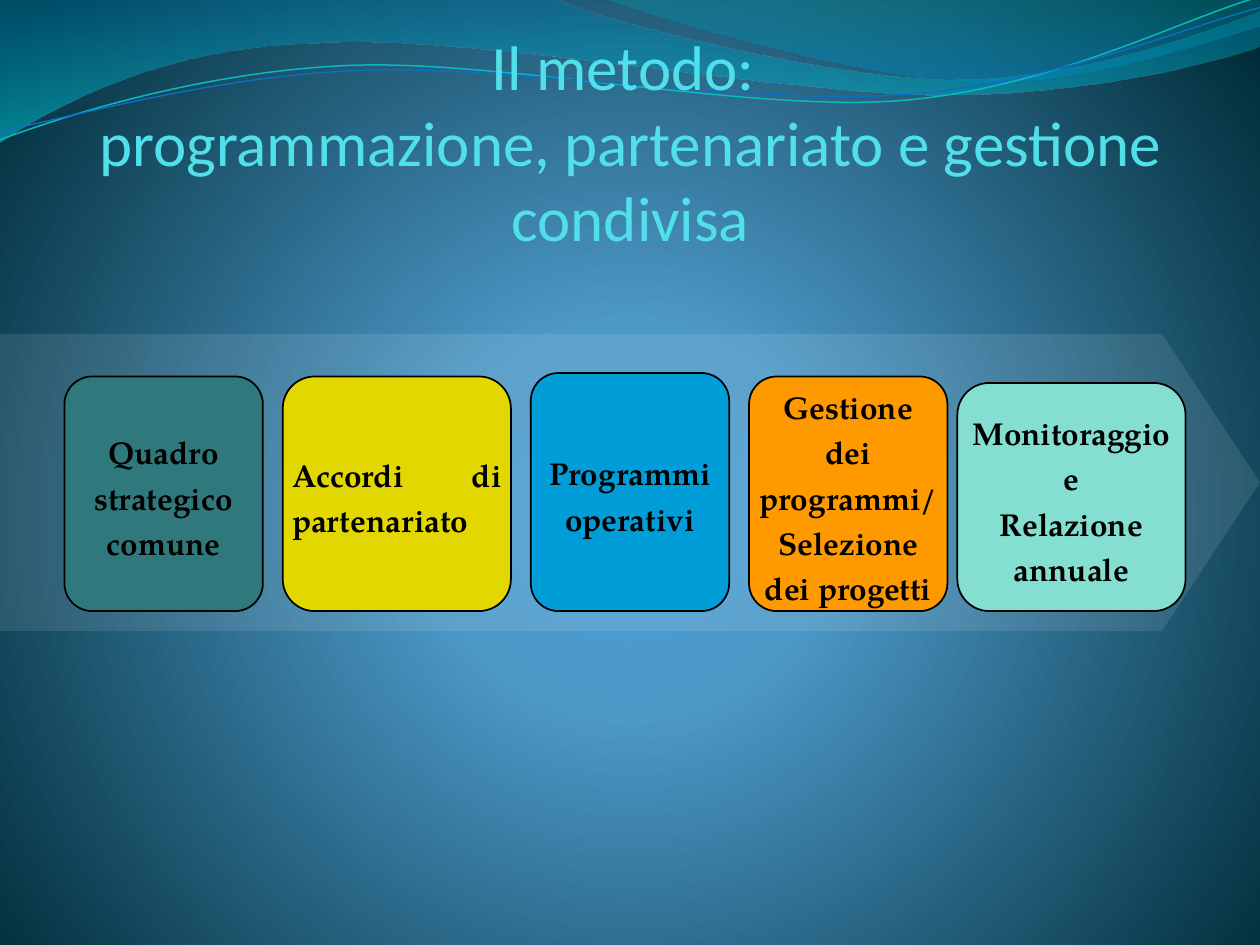
import lxml.etree
import pptx
import pptx.dml.color
import pptx.enum.shapes
import pptx.enum.text
import pptx.oxml.ns
import pptx.util

Cm = pptx.util.Cm
Pt = pptx.util.Pt
RGB = pptx.dml.color.RGBColor.from_string
qn = pptx.oxml.ns.qn
Sub = lxml.etree.SubElement
ALIGN = pptx.enum.text.PP_ALIGN
SHAPE = pptx.enum.shapes.MSO_SHAPE

COLORS = {
    "title": "51E0EA", "text": "000000", "arrow": "FFFFFF",
    "framework": "2F797D", "agreements": "E2D700", "programmes": "009DD9",
    "management": "FF9900", "monitoring": "85DFD0",
    "glow": "4AA0D6", "sky": "4C98C7", "night": "002C38",
    "wave blue": "0074A1", "wave cyan": "00C6CF",
    "wave teal": "00A1A9", "wave azure": "008BBF",
    "teal line": "0AB8BF", "blue line": "0F6FC6",
}


def set_gradient(fill, owner, stops):
    """Give fill the (position %, colour name, opacity %) stops; return its XML without a direction."""
    fill.gradient()
    gradient = owner.find(".//" + qn("a:gradFill"))
    for child in list(gradient):
        gradient.remove(child)
    stop_list = Sub(gradient, qn("a:gsLst"))
    for position, name, opacity in stops:
        stop = Sub(stop_list, qn("a:gs"), pos=str(position * 1000))
        color = Sub(stop, qn("a:srgbClr"), val=COLORS[name])
        if opacity < 100:
            Sub(color, qn("a:alpha"), val=str(opacity * 1000))
    return gradient


def add_wave(slide, start, segments, close):
    """Draw straight (1 point) and Bézier (3 points) segments, in inches, on the slide's master."""
    points = [(Cm(x * 2.54), Cm(y * 2.54)) for x, y in [start, *sum(segments, [])]]
    builder = slide.shapes.build_freeform(*points[0])
    builder.add_line_segments(points[1:], close=close)
    outline = builder.convert_to_shape()
    outline.shadow.inherit = False
    lines = iter(outline.element.findall(".//" + qn("a:lnTo")))
    for segment in segments:
        corners = [next(lines) for _ in segment]
        if len(corners) == 3:
            curve = lxml.etree.Element(qn("a:cubicBezTo"))
            corners[0].addprevious(curve)
            for corner in corners:
                curve.append(corner[0])
                corner.getparent().remove(corner)
    master_tree = slide.slide_layout.slide_master.shapes.element
    used_ids = [int(part.get("id")) for part in master_tree.iter(qn("p:cNvPr"))]
    outline.element.find(".//" + qn("p:cNvPr")).set("id", str(max(used_ids) + 1))
    master_tree.append(outline.element)
    return outline


prs = pptx.Presentation()
prs.slide_width, prs.slide_height = Cm(25.4), Cm(19.05)
slide = prs.slides.add_slide(prs.slide_layouts[5])

# Background
glow = set_gradient(slide.background.fill, slide.element,
                    [(0, "glow", 100), (25, "sky", 100), (100, "night", 100)])
circle = Sub(glow, qn("a:path"), path="circle")
Sub(circle, qn("a:fillToRect"), l="10000", t="110000", r="10000", b="100000")

# Waves along the top
waves = [
    ((0, 0), [
        [(4.4, -0.01)],
        [(4.76, 0.17), (6.64, 0.63), (7.58, 0.63)],
        [(8.53, 0.63), (9.58, 0.26), (10, 0.09)],
        [(10.01, 0.36)],
        [(9.83, 0.44), (8.7, 0.76), (7.46, 0.75)],
        [(6.22, 0.75), (3.82, 0.28), (2.57, 0.34)],
        [(1.29, 0.36), (0.46, 0.83), (-0.01, 1.13)],
        [(0, 0)],
    ], [(0, "wave blue", 45), (100, "wave cyan", 55)]),
    ((4.79, -0.01), [
        [(5.09, 0.11), (6.82, 0.62), (7.69, 0.65)],
        [(8.56, 0.69), (9.61, 0.32), (10, 0.21)],
        [(10, 0)],
        [(4.79, -0.01)],
    ], [(0, "wave teal", 30), (80, "wave azure", 45)]),
]
for start, segments, stops in waves:
    wave = add_wave(slide, start, segments, True)
    Sub(set_gradient(wave.fill, wave.element, stops), qn("a:lin"), ang="5400000", scaled="0")
    wave.line.fill.background()

wave_lines = [
    ((0, 1.11), [
        [(0.48, 0.93), (1.58, 0.57), (2.77, 0.52)],
        [(3.95, 0.47), (5.93, 0.89), (7.13, 0.8)],
        [(8.33, 0.71), (9.38, 0.15), (9.98, -0.02)],
    ], "teal line", 0.85),
    ((0, 1.04), [
        [(0.47, 0.96), (1.64, 0.61), (2.83, 0.56)],
        [(4.03, 0.51), (5.97, 0.84), (7.17, 0.75)],
        [(8.36, 0.67), (9.41, 0.21), (10, 0.06)],
    ], "blue line", 0.75),
]
for start, segments, color, width in wave_lines:
    wave_line = add_wave(slide, start, segments, False)
    wave_line.fill.background()
    wave_line.line.color.rgb = RGB(COLORS[color])
    wave_line.line.width = Pt(width)

# Title
title = slide.shapes.title
title.left, title.top, title.width, title.height = Cm(1.32), Cm(0.74), Cm(22.83), Cm(4.39)
frame = title.text_frame
frame.word_wrap = True
frame.auto_size = pptx.enum.text.MSO_AUTO_SIZE.NONE
frame.vertical_anchor = pptx.enum.text.MSO_ANCHOR.BOTTOM
frame.margin_left = frame.margin_top = frame.margin_bottom = 0
frame.margin_right = Cm(0.05)
heading = frame.paragraphs[0]
heading.alignment = ALIGN.CENTER
for index, line in enumerate(["Il metodo: ", "programmazione, partenariato e gestione condivisa"]):
    if index:
        heading.add_line_break()
    run = heading.add_run()
    run.text = line
    run.font.name = "Calibri"
    run.font.size = Pt(36)
    run.font.color.rgb = RGB(COLORS["title"])

# Arrow behind the steps
arrow = slide.shapes.add_shape(SHAPE.PENTAGON, 0, Cm(6.73), Cm(25.4), Cm(5.99))
arrow.adjustments[0] = 0.33
arrow.shadow.inherit = False
arrow.fill.solid()
arrow.fill.fore_color.rgb = RGB(COLORS["arrow"])
Sub(arrow.element.spPr.find(".//" + qn("a:srgbClr")), qn("a:alpha"), val="10000")
arrow.line.fill.background()

# Steps, all standing on one baseline
baseline, narrow, wide = 12.32, 4, 4.6
steps = [
    (1.3, 7.59, narrow, "framework", ALIGN.CENTER, ["Quadro strategico comune"]),
    (5.7, 7.59, wide, "agreements", ALIGN.JUSTIFY, ["Accordi di partenariato"]),
    (10.7, 7.52, narrow, "programmes", ALIGN.CENTER, ["Programmi operativi"]),
    (15.1, 7.59, narrow, "management", ALIGN.CENTER,
     ["Gestione dei programmi/", "Selezione dei progetti"]),
    (19.3, 7.72, wide, "monitoring", ALIGN.CENTER, ["Monitoraggio e", "Relazione annuale"]),
]
for left, top, width, color, alignment, lines in steps:
    step = slide.shapes.add_shape(SHAPE.ROUNDED_RECTANGLE, Cm(left), Cm(top), Cm(width), Cm(baseline - top))
    step.adjustments[0] = 0.14
    step.shadow.inherit = False
    step.fill.solid()
    step.fill.fore_color.rgb = RGB(COLORS[color])
    step.line.color.rgb = RGB(COLORS["text"])
    step.line.width = Pt(1)
    frame = step.text_frame
    frame.word_wrap = True
    frame.vertical_anchor = pptx.enum.text.MSO_ANCHOR.MIDDLE
    frame.margin_left = frame.margin_right = 0
    frame.margin_top = frame.margin_bottom = Cm(0.13)
    label = frame.paragraphs[0]
    label.alignment = alignment
    label.line_spacing = 1.2
    for index, line in enumerate(lines):
        if index:
            label.add_line_break()
        run = label.add_run()
        run.text = line
        run.font.name = "TeX Gyre Pagella"
        run.font.size = Pt(18)
        run.font.bold = True
        run.font.color.rgb = RGB(COLORS["text"])

prs.save("out.pptx")
